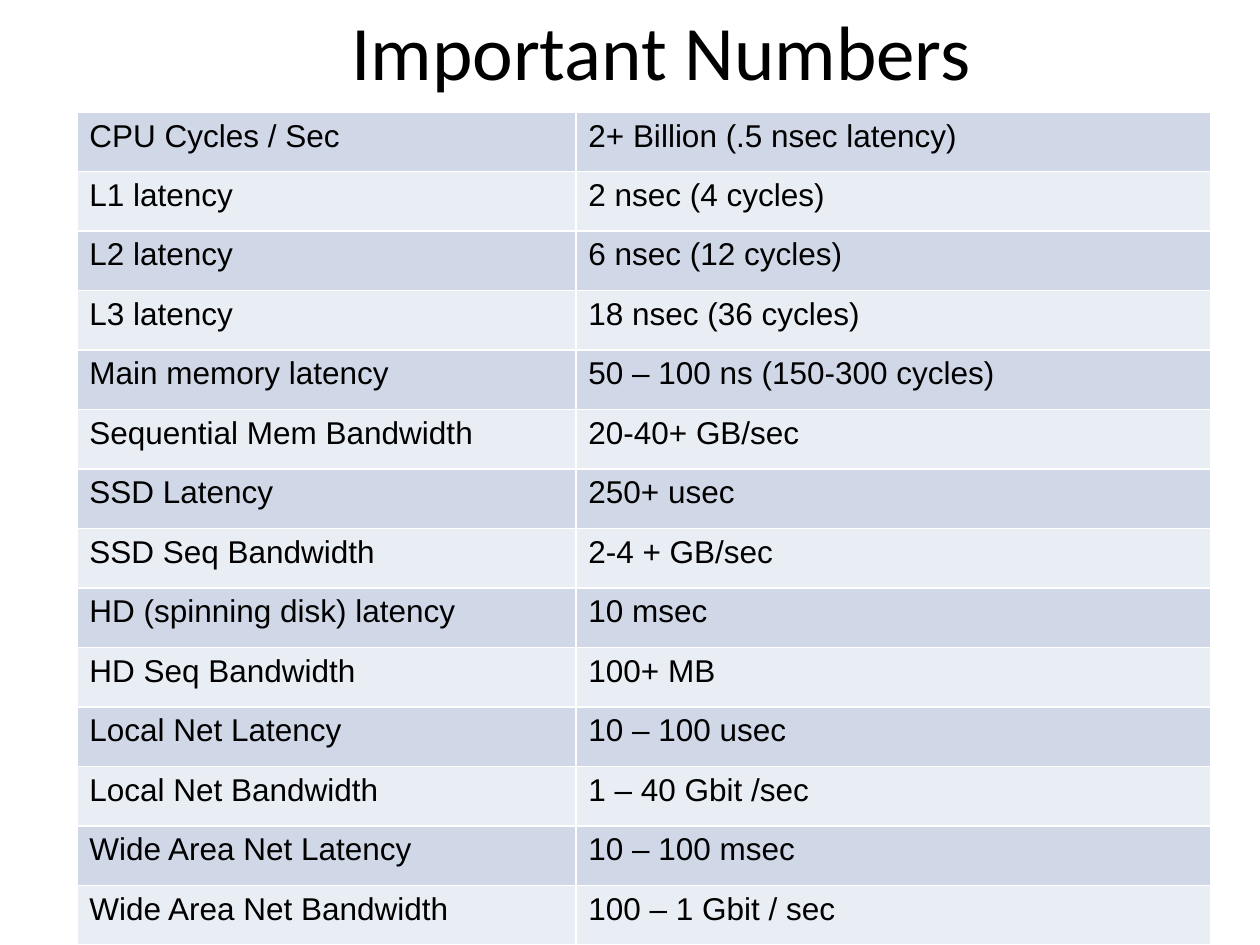
from dataclasses import dataclass

from lxml.etree import SubElement
from pptx import Presentation
from pptx.dml.color import RGBColor
from pptx.enum.text import MSO_ANCHOR, PP_ALIGN
from pptx.oxml.ns import qn
from pptx.util import Inches, Pt


@dataclass(frozen=True)
class Theme:
    text: str = "000000"
    border: str = "FFFFFF"
    bands: tuple = ("D0D8E8", "E9EDF4")
    title_font: str = "Calibri"
    body_font: str = "Arial"
    title_size: int = 44
    body_size: int = 18
    border_width: int = 1


THEME = Theme()

NUMBERS = [
    ("CPU Cycles / Sec", "2+ Billion (.5 nsec latency)"),
    ("L1 latency", "2 nsec (4 cycles)"),
    ("L2 latency", "6 nsec (12 cycles)"),
    ("L3 latency", "18 nsec (36 cycles)"),
    ("Main memory latency", "50 – 100 ns (150-300 cycles)"),
    ("Sequential Mem Bandwidth", "20-40+ GB/sec"),
    ("SSD Latency", "250+ usec"),
    ("SSD Seq Bandwidth", "2-4 + GB/sec"),
    ("HD (spinning disk) latency", "10 msec"),
    ("HD Seq Bandwidth", "100+ MB"),
    ("Local Net Latency", "10 – 100 usec"),
    ("Local Net Bandwidth", "1 – 40 Gbit /sec"),
    ("Wide Area Net Latency", "10 – 100 msec"),
    ("Wide Area Net Bandwidth", "100 – 1 Gbit / sec"),
]
LABEL_SHARE = 0.44  # part of the table width taken by the labels


def add_run(p, text, font, size):
    r = p.add_run()
    r.text = text
    r.font.name = font
    r.font.size = Pt(size)
    r.font.color.rgb = RGBColor.from_string(THEME.text)


def set_borders(cell):
    # Borders come before the fill in the cell properties
    tc_pr = cell._tc.get_or_add_tcPr()
    for side in ("a:lnL", "a:lnR", "a:lnT", "a:lnB"):
        ln = SubElement(tc_pr, qn(side), w=str(Pt(THEME.border_width)))
        fill = SubElement(ln, qn("a:solidFill"))
        SubElement(fill, qn("a:srgbClr"), val=THEME.border)


def add_title(s, text, left, top, width, height):
    sp = s.shapes.title
    sp.left, sp.top, sp.width, sp.height = left, top, width, height
    tf = sp.text_frame
    tf.word_wrap = True
    tf.vertical_anchor = MSO_ANCHOR.MIDDLE
    p = tf.paragraphs[0]
    p.alignment = PP_ALIGN.CENTER
    add_run(p, text, THEME.title_font, THEME.title_size)


def add_numbers_table(s, rows, left, top, width, height):
    table = s.shapes.add_table(len(rows), 2, left, top, width, height).table
    table.first_row = table.horz_banding = False
    label_width = int(width * LABEL_SHARE)
    table.columns[0].width = label_width
    table.columns[1].width = width - label_width

    for i, values in enumerate(rows):
        table.rows[i].height = height // len(rows)
        for j, value in enumerate(values):
            cell = table.cell(i, j)
            set_borders(cell)
            cell.fill.solid()
            cell.fill.fore_color.rgb = RGBColor.from_string(THEME.bands[i % 2])
            add_run(cell.text_frame.paragraphs[0], value,
                    THEME.body_font, THEME.body_size)


def main():
    prs = Presentation()
    prs.slide_width, prs.slide_height = Inches(10), Inches(7.5)
    s = prs.slides.add_slide(prs.slide_layouts[5])  # title only

    # Heading
    add_title(s, "Important Numbers",
              Inches(0.75), Inches(-0.23), Inches(9), Inches(1.25))
    # Latency and bandwidth figures
    add_numbers_table(s, NUMBERS,
                      Inches(0.61), Inches(0.89), Inches(9), Inches(6.61))
    prs.save("out.pptx")


if __name__ == "__main__":
    main()
